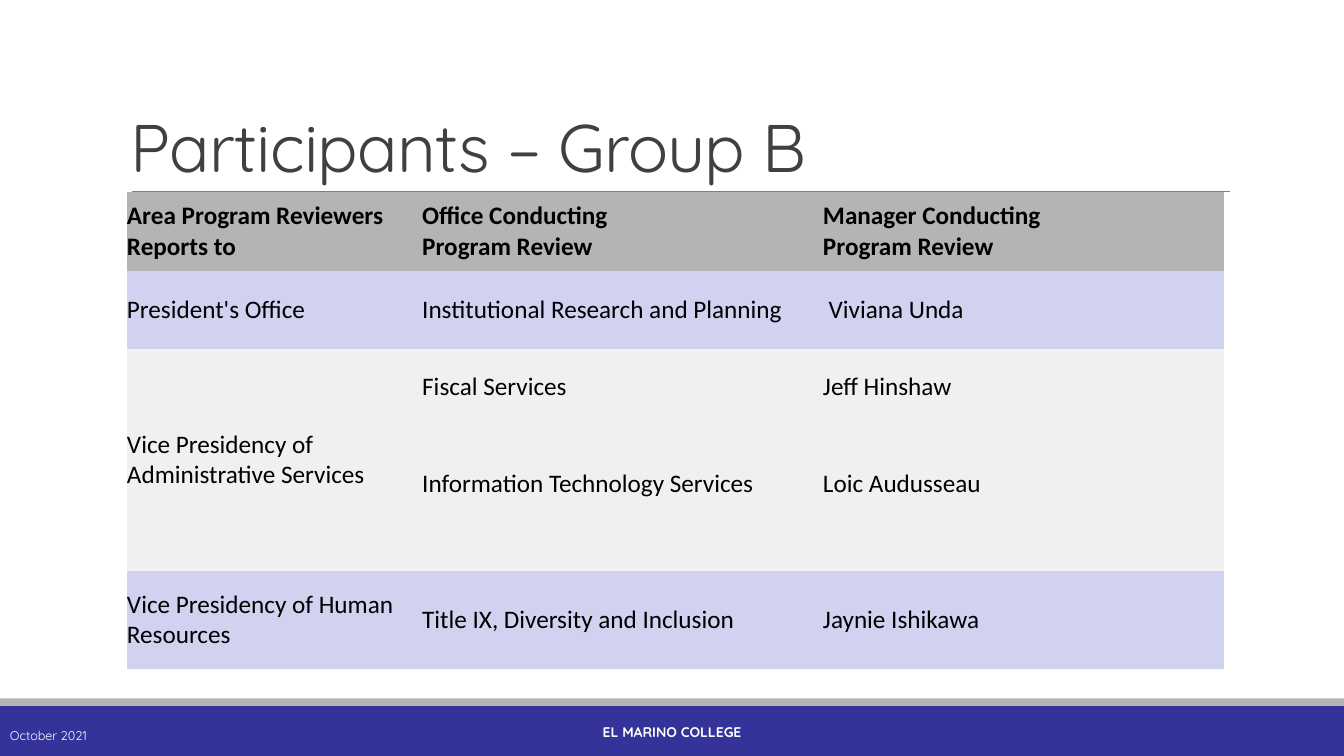
"""Build the Group B participants slide."""
from lxml import etree
from pptx import Presentation, util as u
from pptx.dml.color import RGBColor
from pptx.enum import shapes, text
from pptx.oxml.ns import qn

MIDDLE, BOTTOM = text.MSO_ANCHOR.MIDDLE, text.MSO_ANCHOR.BOTTOM
LEFT, CENTER = text.PP_ALIGN.LEFT, text.PP_ALIGN.CENTER


def rgb(value):
    return RGBColor.from_string(value)


def write(tf, content, size=18, font="Calibri", color="000000", bold=False,
          align=LEFT, line_spacing=None, spacing=None):
    tf.word_wrap = True
    for i, line in enumerate(content.split("\n")):
        p = tf.paragraphs[0] if i == 0 else tf.add_paragraph()
        p.alignment = align
        p.line_spacing = line_spacing
        r = p.add_run()
        r.text = line
        r.font.size, r.font.name, r.font.bold = u.Pt(size), font, bold
        r.font.color.rgb = rgb(color)
        if spacing is not None:
            r._r.get_or_add_rPr().set("spc", str(spacing))


prs = Presentation()
prs.slide_width, prs.slide_height = u.Cm(33.87), u.Cm(19.05)
s = prs.slides.add_slide(prs.slide_layouts[6])

for top, height, color in [(17.78, 1.27, "333399"), (17.6, 0.18, "B3B5B5")]:
    sp = s.shapes.add_shape(shapes.MSO_SHAPE.RECTANGLE, 0, u.Cm(top),
                            prs.slide_width, u.Cm(height))
    sp.shadow.inherit = False
    sp.fill.solid()
    sp.fill.fore_color.rgb = rgb(color)
    sp.line.fill.background()

rule = s.shapes.add_connector(shapes.MSO_CONNECTOR.STRAIGHT,
                              u.Cm(3.32), u.Cm(4.83), u.Cm(31), u.Cm(4.83))
rule.line.color.rgb = rgb("808080")
rule.line.width = u.Pt(0.5)
etree.SubElement(rule._element.spPr, qn("a:effectLst"))

text_boxes = [
    ("Participants – Group B", (3.05, 0.79, 27.94, 4.04), BOTTOM,
     dict(size=48, color="404040", line_spacing=0.85, spacing=-50)),
    ("October 2021", (0, 18.03, 6.86, 1.02), MIDDLE,
     dict(size=9, color="FFFFFF")),
    ("EL MARINO COLLEGE", (10.24, 17.93, 13.39, 1.02), MIDDLE,
     dict(size=10, color="FFFFFF", bold=True, align=CENTER)),
]
for content, box, anchor, style in text_boxes:
    tf = s.shapes.add_textbox(*map(u.Cm, box)).text_frame
    tf.vertical_anchor = anchor
    write(tf, content, font="Quicksand", **style)

col_widths = [7.44, 10.1, 10.1]
rows = [
    (2, "B3B5B5", MIDDLE, ["Area Program Reviewers Reports to",
                           "Office Conducting\nProgram Review",
                           "Manager Conducting\nProgram Review"]),
    (1.96, "D1D1F0", MIDDLE, ["President's Office",
                              "Institutional Research and Planning",
                              " Viviana Unda"]),
    (1.9, "F0F0F0", MIDDLE, ["Vice Presidency of Administrative Services",
                             "Fiscal Services", "Jeff Hinshaw"]),
    (1.9, "F0F0F0", BOTTOM, ["", "Information Technology Services",
                             "Loic Audusseau"]),
    (1.8, "F0F0F0", MIDDLE, ["", "", ""]),
    (2.46, "D1D1F0", MIDDLE, ["Vice Presidency of Human Resources",
                              "Title IX, Diversity and Inclusion",
                              "Jaynie Ishikawa"]),
]
table = s.shapes.add_table(len(rows), len(col_widths), u.Cm(3.2), u.Cm(4.83),
                           u.Cm(sum(col_widths)),
                           u.Cm(sum(row[0] for row in rows))).table
table.horz_banding = False
for col, width in zip(table.columns, col_widths):
    col.width = u.Cm(width)
for i, (height, fill, anchor, contents) in enumerate(rows):
    table.rows[i].height = u.Cm(height)
    for j, content in enumerate(contents):
        cell = table.cell(i, j)
        cell.fill.solid()
        cell.fill.fore_color.rgb = rgb(fill)
        cell.vertical_anchor = anchor
        cell.margin_left = cell.margin_right = 0
        cell.margin_top = cell.margin_bottom = 0
        for side in ("a:lnB", "a:lnT", "a:lnR", "a:lnL"):
            border = etree.Element(qn(side), w="0")
            etree.SubElement(border, qn("a:noFill"))
            cell._tc.get_or_add_tcPr().insert(0, border)
        if content:
            write(cell.text_frame, content, bold=i == 0)
table.cell(2, 0).merge(table.cell(4, 0))

prs.save("out.pptx")
